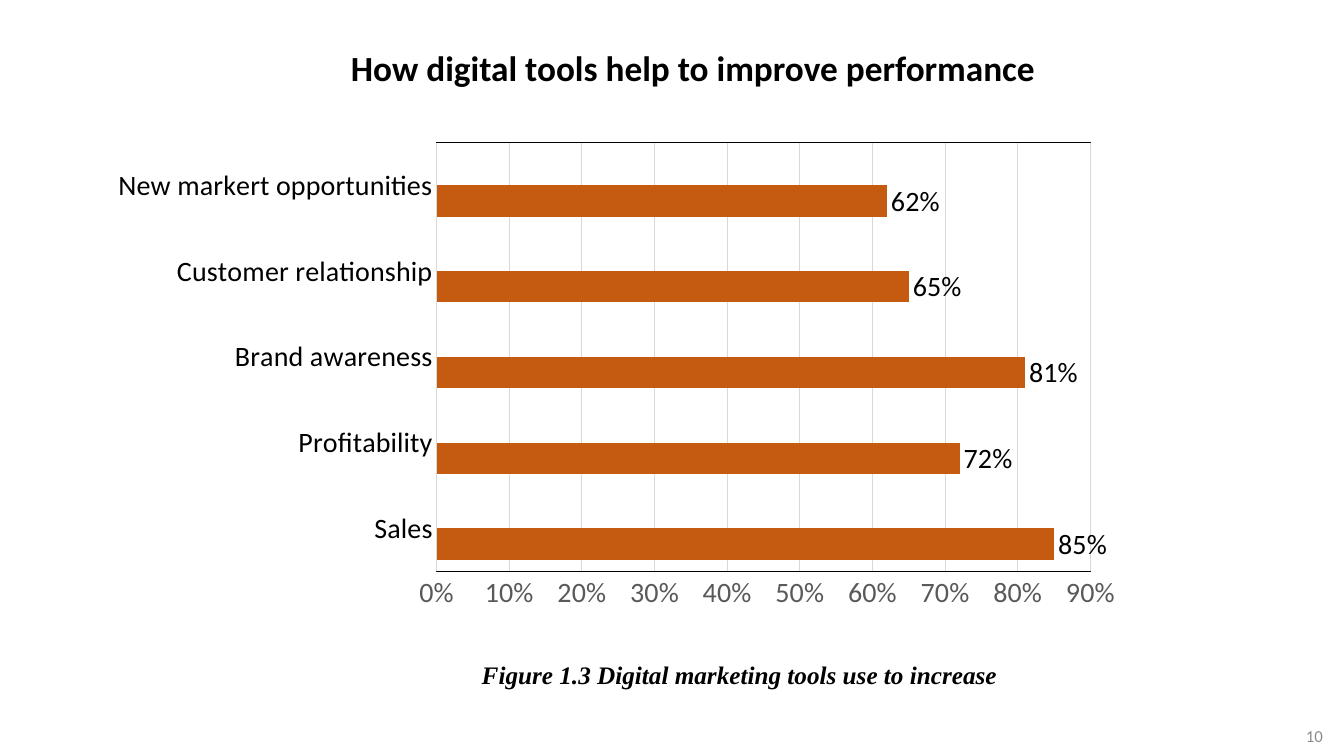
from dataclasses import dataclass

import pptx
import pptx.chart.data
import pptx.dml.color
import pptx.enum.chart
import pptx.enum.text
import pptx.oxml
import pptx.util
from pptx.enum.chart import XL_LABEL_POSITION, XL_TICK_MARK
from pptx.enum.text import MSO_ANCHOR, PP_ALIGN
from pptx.util import Inches, Pt

NS = ('xmlns:c="http://schemas.openxmlformats.org/drawingml/2006/chart" '
      'xmlns:a="http://schemas.openxmlformats.org/drawingml/2006/main"')
BLACK, GRID = "000000", "D9D9D9"
SANS, SERIF = "Calibri", "Times New Roman"


@dataclass
class Box:
    left: float
    top: float
    width: float
    height: float

    def lengths(self) -> list:
        return [Inches(v) for v in (self.left, self.top, self.width, self.height)]


@dataclass
class BarSeries:
    name: str
    values: list
    color: str
    label_color: str
    label_position: XL_LABEL_POSITION


def rgb(color: str) -> pptx.dml.color.RGBColor:
    return pptx.dml.color.RGBColor.from_string(color)


def format_font(font, size: float, color: str, name: str = SANS,
                bold: bool = False, italic: bool = False) -> None:
    font.size, font.name, font.bold, font.italic = Pt(size), name, bold, italic
    font.color.rgb = rgb(color)


def format_line(line, color: str) -> None:
    line.color.rgb = rgb(color)
    line.width = Pt(0.75)


def add_text(slide, text: str, box: Box, *, size: float, color: str = BLACK,
             name: str = SANS, bold: bool = False, italic: bool = False,
             align=PP_ALIGN.LEFT, anchor=MSO_ANCHOR.TOP, wrap: bool = True,
             spacing: float = 1.0) -> None:
    tf = slide.shapes.add_textbox(*box.lengths()).text_frame
    tf.word_wrap, tf.vertical_anchor = wrap, anchor
    p = tf.paragraphs[0]
    p.alignment, p.line_spacing = align, spacing
    r = p.add_run()
    r.text = text
    format_font(r.font, size, color, name, bold, italic)


def frame_plot(chart, layout: Box) -> None:
    """Set the inner plot position as fractions and outline the plot."""
    plot_area = chart.plots[0]._element.getparent()
    for old in plot_area.findall("{*}layout"):
        plot_area.remove(old)
    places = zip("xywh", (layout.left, layout.top, layout.width, layout.height))
    values = "".join(f'<c:{key} val="{v}"/>' for key, v in places)
    plot_area.insert(0, pptx.oxml.parse_xml(
        f'<c:layout {NS}><c:manualLayout><c:layoutTarget val="inner"/>'
        f'<c:xMode val="edge"/><c:yMode val="edge"/>{values}'
        '</c:manualLayout></c:layout>'))
    plot_area.append(pptx.oxml.parse_xml(
        f'<c:spPr {NS}><a:noFill/><a:ln w="9525"><a:solidFill>'
        f'<a:srgbClr val="{BLACK}"/></a:solidFill></a:ln></c:spPr>'))


def add_bar_chart(slide, box: Box, categories: list, series: list[BarSeries]) -> None:
    data = pptx.chart.data.CategoryChartData(number_format="0%")
    data.categories = categories
    for s in series:
        data.add_series(s.name, s.values)
    chart = slide.shapes.add_chart(
        pptx.enum.chart.XL_CHART_TYPE.BAR_CLUSTERED, *box.lengths(), data).chart
    chart.has_title = chart.has_legend = False
    format_font(chart.font, 20, BLACK)

    # Bars and labels
    plot = chart.plots[0]
    plot.gap_width, plot.overlap, plot.vary_by_categories = 75, 0, False
    for s, bars in zip(series, plot.series):
        bars.format.fill.solid()
        bars.format.fill.fore_color.rgb = rgb(s.color)
        labels = bars.data_labels
        labels.show_value, labels.position = True, s.label_position
        labels.number_format, labels.number_format_is_linked = "0%", False
        format_font(labels.font, 20, s.label_color)

    # Axes
    cat, val = chart.category_axis, chart.value_axis
    for axis, color in ((cat, BLACK), (val, "595959")):
        axis.major_tick_mark = axis.minor_tick_mark = XL_TICK_MARK.NONE
        format_font(axis.tick_labels.font, 20, color)
    format_line(cat.format.line, GRID)
    val.format.line.fill.background()
    val.minimum_scale, val.maximum_scale, val.major_unit = 0, 0.9, 0.1
    val.tick_labels.number_format = "0%"
    val.tick_labels.number_format_is_linked = False
    format_line(val.major_gridlines.format.line, GRID)
    frame_plot(chart, Box(0.326, 0.033, 0.629, 0.849))


def main() -> None:
    prs = pptx.Presentation()
    prs.slide_width, prs.slide_height = Inches(13.33), Inches(7.5)
    slide = prs.slides.add_slide(prs.slide_layouts[6])

    # Title
    add_text(slide, "How digital tools help to improve performance",
             Box(0.21, 0.48, 13.33, 0.44), size=25.2, bold=True,
             align=PP_ALIGN.CENTER, anchor=MSO_ANCHOR.MIDDLE, spacing=0.9)

    # Chart
    categories = ["Sales", "Profitability", "Brand awareness",
                  "Customer relationship", "New markert opportunities"]
    add_bar_chart(slide, Box(0.97, 1.25, 10.31, 5.01), categories, [
        BarSeries("Series 1", [0.85, 0.72, 0.81, 0.65, 0.62], "C55A11", BLACK,
                  XL_LABEL_POSITION.OUTSIDE_END),
        BarSeries("Series 2", [None] * len(categories), "ED7D31", "404040",
                  XL_LABEL_POSITION.INSIDE_END),
    ])

    # Caption and page number
    add_text(slide, "Figure 1.3 Digital marketing tools use to increase",
             Box(4.68, 6.49, 5.36, 0.4), size=18, name=SERIF, bold=True,
             italic=True, wrap=False)
    add_text(slide, "10", Box(10.22, 7.1, 3, 0.4), size=12, color="8C8C8C",
             align=PP_ALIGN.RIGHT, anchor=MSO_ANCHOR.MIDDLE)

    prs.save("out.pptx")


if __name__ == "__main__":
    main()
